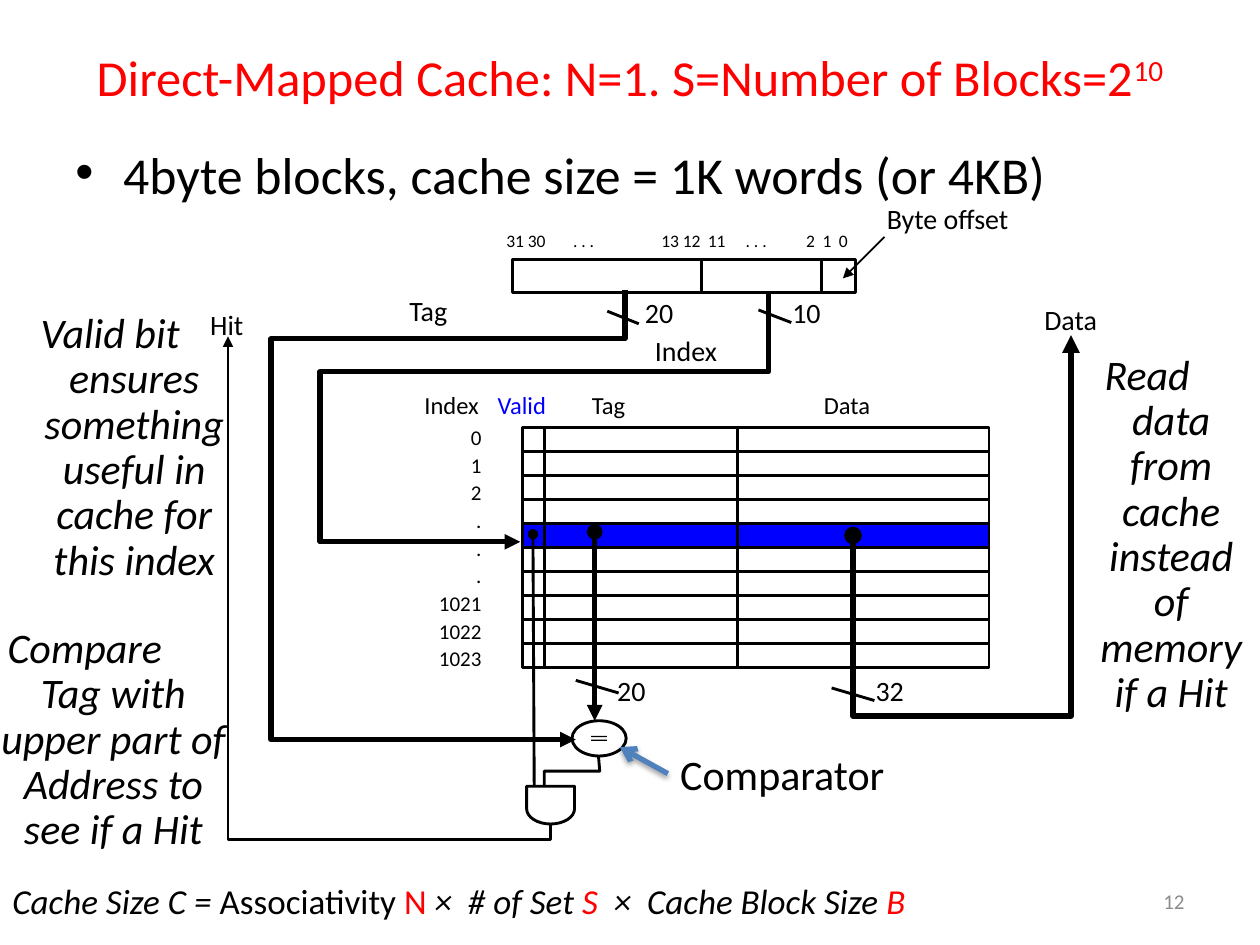
from dataclasses import dataclass
from math import cos, pi, sin
from typing import Any

from lxml.etree import SubElement
from pptx import Presentation
from pptx.dml.color import RGBColor
from pptx.enum.shapes import MSO_CONNECTOR, MSO_SHAPE
from pptx.enum.text import MSO_ANCHOR, MSO_AUTO_SIZE, PP_ALIGN
from pptx.oxml.ns import qn
from pptx.util import Inches, Pt

BLACK, RED, BLUE = "000000", "FF0000", "0000FF"
THIN, BOLD = 1.63, 3


@dataclass
class Area:
    shapes: Any
    x: float
    y: float
    w: float
    h: float

    def at(self, x, y):
        return Inches(self.x + x), Inches(self.y + y)


def hue(code):
    return RGBColor.from_string(code)


def style(font, size, color=BLACK, italic=False):
    font.name, font.size, font.italic = "Calibri", Pt(size), italic
    font.color.rgb = hue(color)


def label(area, x, y, w, h, text, size=16, color=BLACK, align=PP_ALIGN.LEFT,
          wrap=False, grow=True, italic=False, space=None):
    box = area.shapes.add_textbox(*area.at(x, y), Inches(w), Inches(h))
    frame = box.text_frame
    frame.word_wrap = wrap
    frame.auto_size = MSO_AUTO_SIZE.SHAPE_TO_FIT_TEXT if grow else MSO_AUTO_SIZE.NONE
    frame.text = text
    for para in frame.paragraphs:
        para.alignment = align
        if space:
            para.line_spacing = space
        for run in para.runs:
            style(run.font, size, color, italic)
    return box


def hang(para):
    props = para._p.get_or_add_pPr()
    props.set("marL", str(Inches(0.38)))
    props.set("indent", str(-Inches(0.38)))
    return props


def stroke(shape, width, color=BLACK, head=None, tail=None):
    shape.line.width = Pt(width)
    shape.line.color.rgb = hue(color)
    for tag, kind in (("a:headEnd", head), ("a:tailEnd", tail)):
        if kind:
            SubElement(shape.line._get_or_add_ln(), qn(tag), type=kind)


def line(area, start, end, width=THIN, color=BLACK, head=None, tail=None):
    link = area.shapes.add_connector(
        MSO_CONNECTOR.STRAIGHT, *area.at(*start), *area.at(*end))
    stroke(link, width, color, head, tail)
    SubElement(link._element.spPr, qn("a:effectLst"))
    return link


def route(area, points, width=THIN, head=None, tail=None, close=False):
    spots = [area.at(*point) for point in points]
    pen = area.shapes.build_freeform(*spots[0], scale=1.0)
    pen.add_line_segments(spots[1:], close=close)
    shape = pen.convert_to_shape()
    shape.shadow.inherit = False
    shape.fill.background()
    stroke(shape, width, head=head, tail=tail)


def block(area, kind, x, y, w, h, fill=None, width=THIN):
    shape = area.shapes.add_shape(kind, *area.at(x, y), Inches(w), Inches(h))
    shape.shadow.inherit = False
    if fill:
        shape.fill.solid()
        shape.fill.fore_color.rgb = hue(fill)
    else:
        shape.fill.background()
    if width:
        stroke(shape, width)
    else:
        shape.line.fill.background()
    return shape


def slash(area, x, y, w, dx, dy, text):
    line(area, (x, y), (x + w, y + 0.1))
    label(area, x + dx, y + dy, 0.45, 0.37, text)


def heading(title, area):
    title.left, title.top = area.at(0, 0)
    title.width, title.height = Inches(area.w), Inches(area.h)
    frame = title.text_frame
    frame.vertical_anchor = MSO_ANCHOR.MIDDLE
    para = frame.paragraphs[0]
    para.alignment = PP_ALIGN.CENTER
    for text in ("Direct-Mapped Cache: N=1. S=Number of Blocks=2", "10"):
        run = para.add_run()
        run.text = text
        style(run.font, 28.8, RED)
    run._r.get_or_add_rPr().set("baseline", "30000")


def bullet(area):
    box = label(area, 0, 0, area.w, area.h,
                "4byte blocks, cache size = 1K words (or 4KB)",
                29.6, wrap=True, grow=False, space=0.6)
    props = hang(box.text_frame.paragraphs[0])
    SubElement(props, qn("a:buFont"), typeface="Arial")
    SubElement(props, qn("a:buChar"), char="•")


def address(area):
    block(area, MSO_SHAPE.RECTANGLE, 0, 0, area.w, area.h)
    for x in (1.5, 2.45):
        line(area, (x, 0), (x, area.h))
    bits = label(area, -0.15, -0.28, 3.1, 0.27,
                 "31 30\t. . .\t13 12\t11\t. . .\t2\t1\t0", 10, wrap=True)
    props = bits.text_frame.paragraphs[0]._p.get_or_add_pPr()
    tabs = SubElement(props, qn("a:tabLst"))
    for stop in (0.53, 1.23, 1.6, 1.9, 2.38, 2.51, 2.64):
        SubElement(tabs, qn("a:tab"), pos=str(Inches(stop)), algn="l")
    label(area, 2.87, -0.51, 1.25, 0.37, "Byte offset", wrap=True)
    line(area, (2.95, -0.18), (2.62, 0.15), 1, tail="triangle")


def tag(area):
    slash(area, 2.67, 0.17, 0.25, 0.2, -0.17, "20")
    route(area, [(area.w, 0), (area.w, 0.39), (0, 0.39), (0, area.h),
                 (2.42, area.h)], BOLD, tail="triangle")
    label(area, 1, -0.02, 0.58, 0.37, "Tag")


def index(area):
    slash(area, 3.48, 0.14, 0.26, 0.17, -0.16, "10")
    route(area, [(area.w, 0), (area.w, 0.63), (0, 0.63), (0, area.h),
                 (1.59, area.h)], BOLD, tail="triangle")
    label(area, 2.56, 0.28, 0.74, 0.37, "Index")


def cache(area):
    step = area.h / 10
    block(area, MSO_SHAPE.RECTANGLE, 0, 0, area.w, area.h)
    block(area, MSO_SHAPE.RECTANGLE, 0, 4 * step, area.w, step, BLUE)
    for row in (1, 2, 3, 6, 7, 8, 9):
        line(area, (area.w, row * step), (0, row * step))
    for x in (0.17, 1.7):
        line(area, (x, 0), (x, area.h))
    for x, w, text, color in ((2.29, 0.61, "Data", BLACK), (-0.88, 0.66, "Index", BLACK),
                              (0.45, 0.53, "Tag", BLACK), (-0.3, 0.59, "Valid", BLUE)):
        label(area, x, -0.34, w, 0.33, text, 14, color)
    label(area, -0.8, -0.09, 0.57, 2.09, "0\n1\n2\n.\n.\n.\n1021\n1022\n1023",
          12, align=PP_ALIGN.RIGHT, space=1.1)


def compare(area):
    block(area, MSO_SHAPE.OVAL, 0, 0, area.w, area.h)
    equal = block(area, MSO_SHAPE.MATH_EQUAL, 0.13, 0.09, 0.17, 0.1, BLACK, 0)
    equal.adjustments[0], equal.adjustments[1] = 0.1, 0.2
    slash(area, 0.03, -0.32, 0.34, 0.23, -0.1, "20")
    line(area, (0.18, -1.5), (0.18, 0), BOLD, head="oval", tail="triangle")
    name = label(area, 0.76, 0.17, 1.84, 0.5, "Comparator", 24)
    arrow = line(area, (0.76, 0.42), (0.38, 0.21), BOLD, "4F81BD", tail="arrow")
    arrow.begin_connect(name, 1)
    effects = arrow._element.spPr.find(qn("a:effectLst"))
    shade = SubElement(effects, qn("a:outerShdw"), blurRad=str(Pt(3.1)),
                       dist=str(Pt(1.6)), dir="5400000", rotWithShape="0")
    tint = SubElement(shade, qn("a:srgbClr"), val=BLACK)
    SubElement(tint, qn("a:alpha"), val="38000")


def data(area):
    route(area, [(0, 1.59), (0, area.h), (area.w, area.h), (area.w, 0)],
          3.38, head="oval", tail="triangle")
    slash(area, -0.17, 2.8, 0.34, 0.25, -0.16, "32")
    label(area, 1.42, -0.31, 0.67, 0.37, "Data")


def hit(area):
    arc = [(2.56 + 0.19 * cos(pi * k / 16), 3.75 + 0.12 * sin(pi * k / 16))
           for k in range(17)]
    route(area, [*arc, (2.37, 3.57), (2.75, 3.57)], close=True)
    line(area, (2.42, 1.57), (2.43, 3.57), head="oval")
    route(area, [(2.94, 3.33), (2.95, 3.45), (2.51, 3.45), (2.51, 3.57)])
    route(area, [(area.w, 3.87), (area.w, area.h), (0, area.h), (0, 0)],
          tail="triangle")
    label(area, -0.24, -0.28, 0.47, 0.37, "Hit")


def note(area, text):
    box = label(area, 0, 0, area.w, area.h, text, 24, align=PP_ALIGN.CENTER,
                wrap=True, grow=False, italic=True, space=0.9)
    hang(box.text_frame.paragraphs[0])


def footer(area):
    box = label(area, 0, 0, area.w, area.h, "", wrap=True)
    para = box.text_frame.paragraphs[0]
    for text, color, italic in (
            ("Cache Size C = ", BLACK, True), ("Associativity", BLACK, False),
            (" N ", RED, False), ("×  # of Set ", BLACK, True), ("S", RED, True),
            ("  ×  Cache Block Size ", BLACK, True), ("B", RED, True)):
        run = para.add_run()
        run.text = text
        style(run.font, 20, color, italic)


def number(area):
    box = label(area, 0, 0, area.w, area.h, "12", 12, "8C8C8C",
                PP_ALIGN.RIGHT, wrap=True, grow=False)
    box.text_frame.vertical_anchor = MSO_ANCHOR.MIDDLE


def main():
    deck = Presentation()
    deck.slide_width, deck.slide_height = Inches(10), Inches(7.5)
    slide = deck.slides.add_slide(deck.slide_layouts[5])
    shapes = slide.shapes
    heading(shapes.title, Area(shapes, 0.5, 0.17, 9, 0.87))
    for draw, box in ((bullet, (0.5, 1.26, 8.83, 0.74)), (tag, (2.15, 2.3, 2.81, 3.57)),
                      (index, (2.54, 2.32, 3.56, 1.98)), (cache, (4.15, 3.39, 3.7, 1.91)),
                      (address, (4.07, 2.06, 2.72, 0.26)), (compare, (4.54, 5.72, 0.43, 0.28)),
                      (data, (6.77, 2.66, 1.73, 3.02)), (hit, (1.81, 2.67, 2.56, 3.99)),
                      (number, (7.17, 6.95, 2.33, 0.4)), (footer, (0, 6.93, 9.52, 0.44))):
        draw(Area(shapes, *box))
    for text, box in (
            ("Valid bit ensures something useful in cache for this index", (-0.21, 2.43, 2.17, 0.5)),
            ("Compare \vTag with upper part of Address to see if a Hit", (-0.5, 4.93, 2.42, 2.24)),
            ("Read\vdata from cache instead of memory if a Hit", (8.21, 2.76, 1.79, 0.5))):
        note(Area(shapes, *box), text)
    deck.save("out.pptx")


if __name__ == "__main__":
    main()
